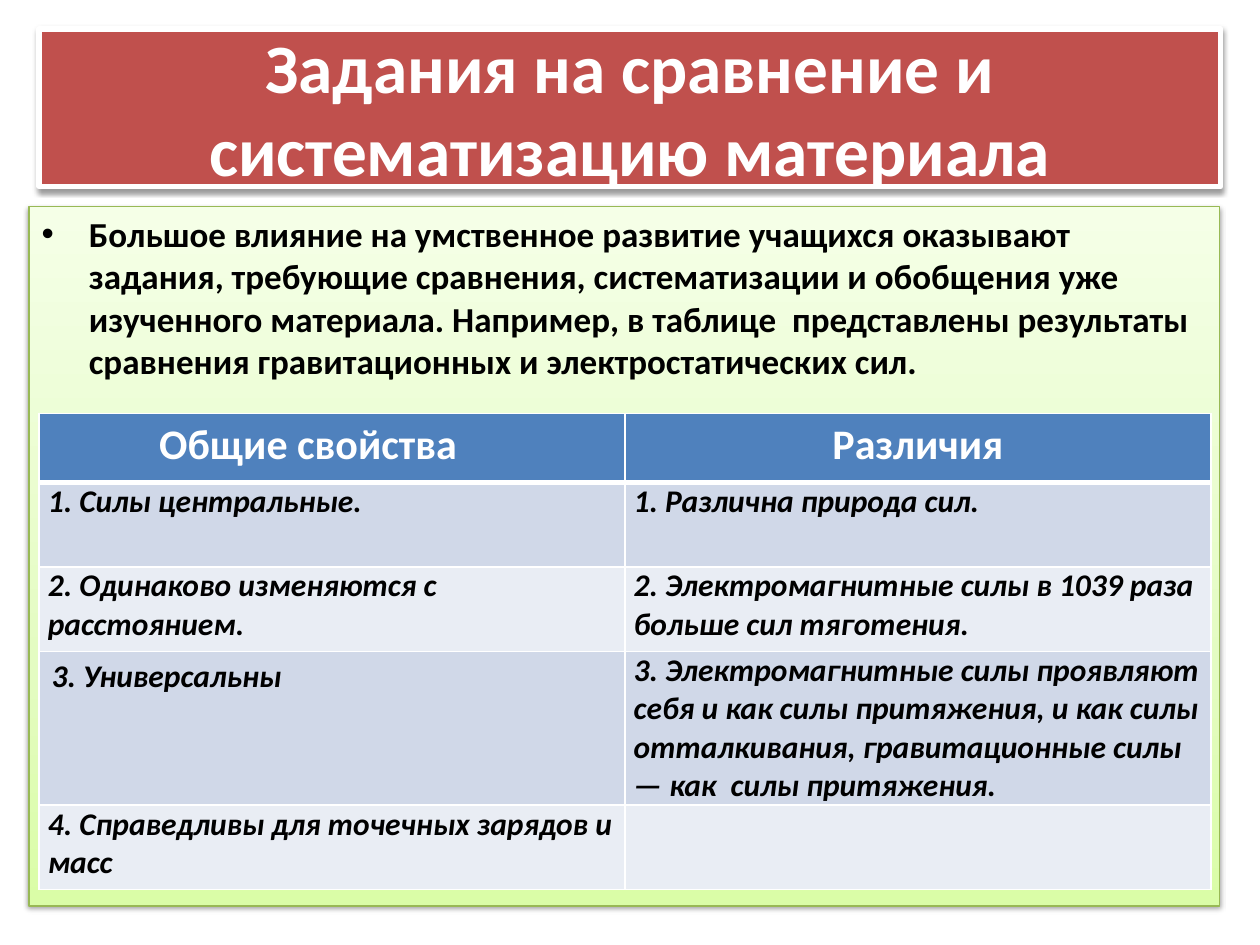
from lxml import etree
from pptx import Presentation
from pptx.dml.color import RGBColor
from pptx.enum import text
from pptx.oxml import parse_xml
from pptx.oxml.ns import nsdecls, qn
from pptx.util import Inches, Pt

FONT = "Calibri"
TITLE = "Задания на сравнение и систематизацию материала"
INTRO = ("Большое влияние на умственное развитие учащихся оказывают задания, "
         "требующие сравнения, систематизации и обобщения уже изученного материала. "
         "Например, в таблице  представлены результаты сравнения гравитационных "
         "и электростатических сил.")
ROWS = [
    ("Общие свойства", "Различия"),
    ("1. Силы центральные.", "1. Различна природа сил."),
    ("2. Одинаково изменяются с расстоянием.",
     "2. Электромагнитные силы в 1039 раза больше сил тяготения."),
    ("3. Универсальны",
     "3. Электромагнитные силы проявляют себя и как силы притяжения, и как силы "
     "отталкивания, гравитационные силы — как  силы притяжения."),
    ("4. Справедливы для точечных зарядов и масс", ""),
]
ROW_HEIGHTS = [0.55, 0.67, 0.67, 1.2, 0.67]
HEADER_FILL, BAND_FILLS = "4F81BD", ("D0D8E8", "E9EDF4")


def color(value):
    return RGBColor.from_string(value)


def place(shape, box):
    shape.left, shape.top, shape.width, shape.height = map(Inches, box)


def style_font(paragraph, size, value, italic=False):
    font = paragraph.font
    font.name, font.size, font.bold, font.italic = FONT, Pt(size), True, italic
    font.color.rgb = color(value)


def outline(shape, value, width):
    shape.line.color.rgb = color(value)
    shape.line.width = Pt(width)


def add_shadow(shape):
    shape._element.spPr.append(parse_xml(
        f'<a:effectLst {nsdecls("a")}>'
        f'<a:outerShdw blurRad="{Pt(3.1)}" dist="{Pt(1.6)}" dir="5400000" rotWithShape="0">'
        '<a:srgbClr val="000000"><a:alpha val="38000"/></a:srgbClr>'
        '</a:outerShdw></a:effectLst>'))


def fill_gradient(shape, stops, angle):
    """Fill with (percent, colour) stops; the angle runs counter-clockwise."""
    shape.fill.gradient()
    shape.fill.gradient_angle = angle
    stop_list = shape._element.spPr.find(qn("a:gradFill")).find(qn("a:gsLst"))
    for stop in list(stop_list):
        stop_list.remove(stop)
    for percent, value in stops:
        stop = etree.SubElement(stop_list, qn("a:gs"), pos=str(percent * 1000))
        etree.SubElement(stop, qn("a:srgbClr"), val=value)


def set_borders(cell, widths):
    """Draw white borders; widths maps each side (L, R, T, B) to points."""
    properties = cell._tc.get_or_add_tcPr()
    for side, width in widths.items():
        properties.append(parse_xml(
            f'<a:ln{side} {nsdecls("a")} w="{Pt(width)}"><a:solidFill>'
            f'<a:srgbClr val="FFFFFF"/></a:solidFill></a:ln{side}>'))


def build_title(title, box):
    place(title, box)
    title.fill.solid()
    title.fill.fore_color.rgb = color("C0504D")
    outline(title, "FFFFFF", 3)
    add_shadow(title)
    frame = title.text_frame
    frame.text = TITLE
    frame.auto_size = text.MSO_AUTO_SIZE.NONE
    frame.vertical_anchor = text.MSO_ANCHOR.MIDDLE
    frame.paragraphs[0].alignment = text.PP_ALIGN.CENTER
    style_font(frame.paragraphs[0], 39.6, "FFFFFF")


def build_intro(body, box):
    place(body, box)
    fill_gradient(body, [(0, "DAFDA7"), (35, "E4FCC2"), (100, "F5FFE7")], 90)
    outline(body, "98B955", 0.75)
    add_shadow(body)
    frame = body.text_frame
    frame.text = INTRO
    frame.auto_size = text.MSO_AUTO_SIZE.NONE
    style_font(frame.paragraphs[0], 20, "000000")


def build_table(slide, box):
    table = slide.shapes.add_table(len(ROWS), 2, *map(Inches, box)).table
    for row, height in zip(table.rows, ROW_HEIGHTS):
        row.height = Inches(height)
    for row_index, values in enumerate(ROWS):
        header = row_index == 0
        for column_index, value in enumerate(values):
            cell = table.cell(row_index, column_index)
            set_borders(cell, {"L": 1, "R": 1, "T": 3 if row_index == 1 else 1,
                               "B": 3 if header else 1})
            cell.fill.solid()
            cell.fill.fore_color.rgb = color(
                HEADER_FILL if header else BAND_FILLS[(row_index - 1) % 2])
            cell.text = value
            paragraph = cell.text_frame.paragraphs[0]
            if header:
                paragraph.alignment = text.PP_ALIGN.CENTER
                style_font(paragraph, 24, "FFFFFF")
            else:
                style_font(paragraph, 18, "000000", italic=True)
                if value != "3. Универсальны":
                    cell.margin_left = cell.margin_right = Inches(0.07)
                    cell.margin_top = cell.margin_bottom = 0
    table.cell(0, 0).margin_right = Inches(0.48)


def main():
    presentation = Presentation()
    presentation.slide_width, presentation.slide_height = Inches(10), Inches(7.5)
    slide = presentation.slides.add_slide(presentation.slide_layouts[1])
    build_title(slide.shapes.title, (0.31, 0.23, 9.38, 1.25))
    build_intro(slide.placeholders[1], (0.23, 1.64, 9.45, 5.55))
    build_table(slide, (0.31, 3.28, 9.3, sum(ROW_HEIGHTS)))
    presentation.save("out.pptx")


if __name__ == "__main__":
    main()
